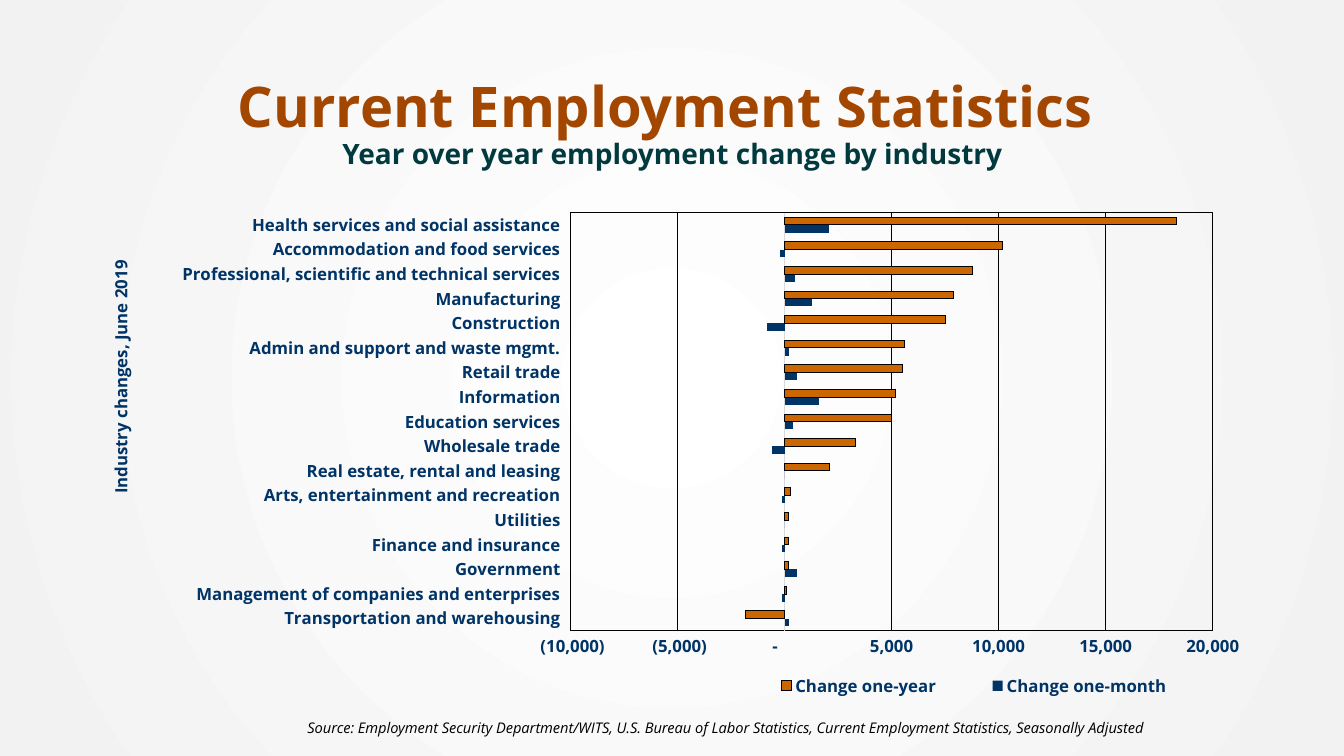
from lxml.etree import SubElement
from pptx import Presentation
from pptx.chart.data import CategoryChartData
from pptx.dml.color import RGBColor
from pptx.enum.chart import (XL_CHART_TYPE as ChartType, XL_LEGEND_POSITION as LegendPosition,
                             XL_TICK_LABEL_POSITION as LabelPosition, XL_TICK_MARK as TickMark)
from pptx.enum.text import MSO_ANCHOR as Anchor, MSO_AUTO_SIZE as AutoSize, PP_ALIGN as Align
from pptx.oxml import parse_xml
from pptx.oxml.ns import nsdecls, qn
from pptx.util import Inches, Pt

FONT = "Open Sans"
WHITE = RGBColor(0xFF, 0xFF, 0xFF)
PALE_GREY = RGBColor(0xF2, 0xF2, 0xF2)
AXIS_GREY = RGBColor(0xD9, 0xD9, 0xD9)
BLACK = RGBColor(0, 0, 0)
RUST = RGBColor(0xA2, 0x46, 0x00)
TEAL = RGBColor(0x00, 0x3A, 0x3F)
NAVY = RGBColor(0x00, 0x33, 0x66)
ORANGE = RGBColor(0xCC, 0x66, 0x00)

# Industry, change over one month, change over one year (bottom to top)
INDUSTRIES = [
    ("Transportation and warehousing", 200, -1800),
    ("Management of companies and enterprises", -100, 100),
    ("Government", 600, 200),
    ("Finance and insurance", -100, 200),
    ("Utilities", 0, 200),
    ("Arts, entertainment and recreation", -100, 300),
    ("Real estate, rental and leasing", 0, 2100),
    ("Wholesale trade", -600, 3300),
    ("Education services", 400, 5000),
    ("Information", 1600, 5200),
    ("Retail trade", 600, 5500),
    ("Admin and support and waste mgmt.", 200, 5600),
    ("Construction", -800, 7500),
    ("Manufacturing", 1300, 7900),
    ("Professional, scientific and technical services", 500, 8800),
    ("Accommodation and food services", -200, 10200),
    ("Health services and social assistance", 2100, 18300),
]
NUMBER_FORMAT = '_(* #,##0_);_(* \\(#,##0\\);_(* "-"??_);_(@_)'


def style_font(font, size, color, bold=False, italic=False):
    font.name, font.size, font.bold, font.italic = FONT, Pt(size), bold, italic
    font.color.rgb = color


def add_run(paragraph, text, size, color, **style):
    run = paragraph.add_run()
    run.text = text
    style_font(run.font, size, color, **style)


def set_background(slide):
    """Radial gradient from the centre outwards."""
    fill = slide.background.fill
    fill.gradient()
    for stop, color in zip(fill.gradient_stops, (WHITE, PALE_GREY)):
        stop.color.rgb = color
    linear = slide.background._cSld.find(".//" + qn("a:lin"))
    linear.getparent().replace(linear, parse_xml(
        f'<a:path {nsdecls("a")} path="circle">'
        '<a:fillToRect l="50000" t="50000" r="50000" b="50000"/></a:path>'))


def add_heading(slide, left, top, width, height):
    title = slide.shapes.title
    title.left, title.top, title.width, title.height = left, top, width, height
    frame = title.text_frame
    frame.auto_size, frame.vertical_anchor = AutoSize.NONE, Anchor.MIDDLE
    paragraph = frame.paragraphs[0]
    paragraph.alignment, paragraph.line_spacing = Align.CENTER, 0.9
    add_run(paragraph, "Current Employment Statistics ", 40, RUST, bold=True)
    paragraph.add_line_break()
    add_run(paragraph, "Year over year employment change by industry", 20, TEAL, bold=True)


def set_layout(element, position, inner=False):
    """Place a chart part by fractions of the chart: x, y and, if given, w, h."""
    for old in element.findall(qn("c:layout")):
        element.remove(old)
    layout = parse_xml(f'<c:layout {nsdecls("c")}><c:manualLayout/></c:layout>')
    settings = [("layoutTarget", "inner")] if inner else []
    settings += [("xMode", "edge"), ("yMode", "edge"), *zip("xywh", position)]
    for tag, value in settings:
        SubElement(layout[0], qn("c:" + tag)).set("val", str(value))
    overlay = element.find(qn("c:overlay"))
    if overlay is None:
        element.insert(0, layout)
    else:
        overlay.addprevious(layout)


def format_category_axis(axis):
    axis.tick_label_position = LabelPosition.LOW
    axis.format.line.color.rgb = AXIS_GREY
    axis.format.line.width = Pt(0.75)
    frame = axis.axis_title.text_frame
    add_run(frame.paragraphs[0], "Industry changes, June 2019", 12, NAVY, bold=True)
    body = frame._txBody.find(qn("a:bodyPr"))
    body.set("rot", "-5400000")
    body.set("vert", "horz")
    set_layout(axis.axis_title._element, (0.01, 0.11))


def format_value_axis(axis):
    axis.minimum_scale, axis.maximum_scale, axis.major_unit = -10000, 20000, 5000
    axis.tick_labels.number_format = NUMBER_FORMAT
    axis.tick_labels.number_format_is_linked = False
    axis.format.line.fill.background()
    axis.major_gridlines.format.line.color.rgb = BLACK
    axis.major_gridlines.format.line.width = Pt(0.75)


def add_industry_chart(slide, left, top, width, height):
    names, monthly, yearly = zip(*INDUSTRIES)
    data = CategoryChartData()
    data.categories = names
    data.add_series("Change one-month", monthly)
    data.add_series("Change one-year", yearly)
    chart = slide.shapes.add_chart(ChartType.BAR_CLUSTERED, left, top, width, height, data).chart
    style_font(chart.font, 10, BLACK)
    chart.has_title = False

    # Bars
    plot = chart.plots[0]
    plot.gap_width, plot.overlap, plot.vary_by_categories = 122, 0, False
    for series, color in zip(plot.series, (NAVY, ORANGE)):
        series.invert_if_negative = False
        series.format.fill.solid()
        series.format.fill.fore_color.rgb = color
    outline = plot.series[1].format.line
    outline.color.rgb, outline.width = BLACK, Pt(0)

    # Axes
    for axis in (chart.category_axis, chart.value_axis):
        axis.major_tick_mark = axis.minor_tick_mark = TickMark.NONE
        style_font(axis.tick_labels.font, 12, NAVY, bold=True)
    format_category_axis(chart.category_axis)
    format_value_axis(chart.value_axis)

    # Framed plot area
    plot_area = chart._chartSpace.chart.plotArea
    set_layout(plot_area, (0.412, 0.022, 0.554, 0.825), inner=True)
    plot_area.append(parse_xml(
        f'<c:spPr {nsdecls("c", "a")}><a:noFill/><a:ln w="9525"><a:solidFill>'
        f'<a:srgbClr val="{BLACK}"/></a:solidFill></a:ln></c:spPr>'))

    # Legend
    chart.has_legend = True
    legend = chart.legend
    legend.position, legend.include_in_layout = LegendPosition.BOTTOM, False
    style_font(legend.font, 12, NAVY, bold=True)
    set_layout(legend._element, (0.55, 0.92, 0.42, 0.07))


def add_source_note(slide, left, top, width, height):
    frame = slide.shapes.add_textbox(left, top, width, height).text_frame
    frame.word_wrap, frame.auto_size = True, AutoSize.SHAPE_TO_FIT_TEXT
    add_run(frame.paragraphs[0],
            "Source: Employment Security Department/WITS, U.S. Bureau of Labor Statistics, "
            "Current Employment Statistics, Seasonally Adjusted", 10.5, BLACK, italic=True)


def main():
    presentation = Presentation()
    presentation.slide_width, presentation.slide_height = Inches(13.33), Inches(7.5)
    slide = presentation.slides.add_slide(presentation.slide_layouts[5])
    set_background(slide)
    add_heading(slide, Inches(1.41), Inches(0.63), Inches(10.52), Inches(1.22))
    add_industry_chart(slide, Inches(0.92), Inches(2), Inches(11.5), Inches(5.03))
    add_source_note(slide, Inches(2.95), Inches(7.08), Inches(8.56), Inches(0.28))
    presentation.save("out.pptx")


if __name__ == "__main__":
    main()
